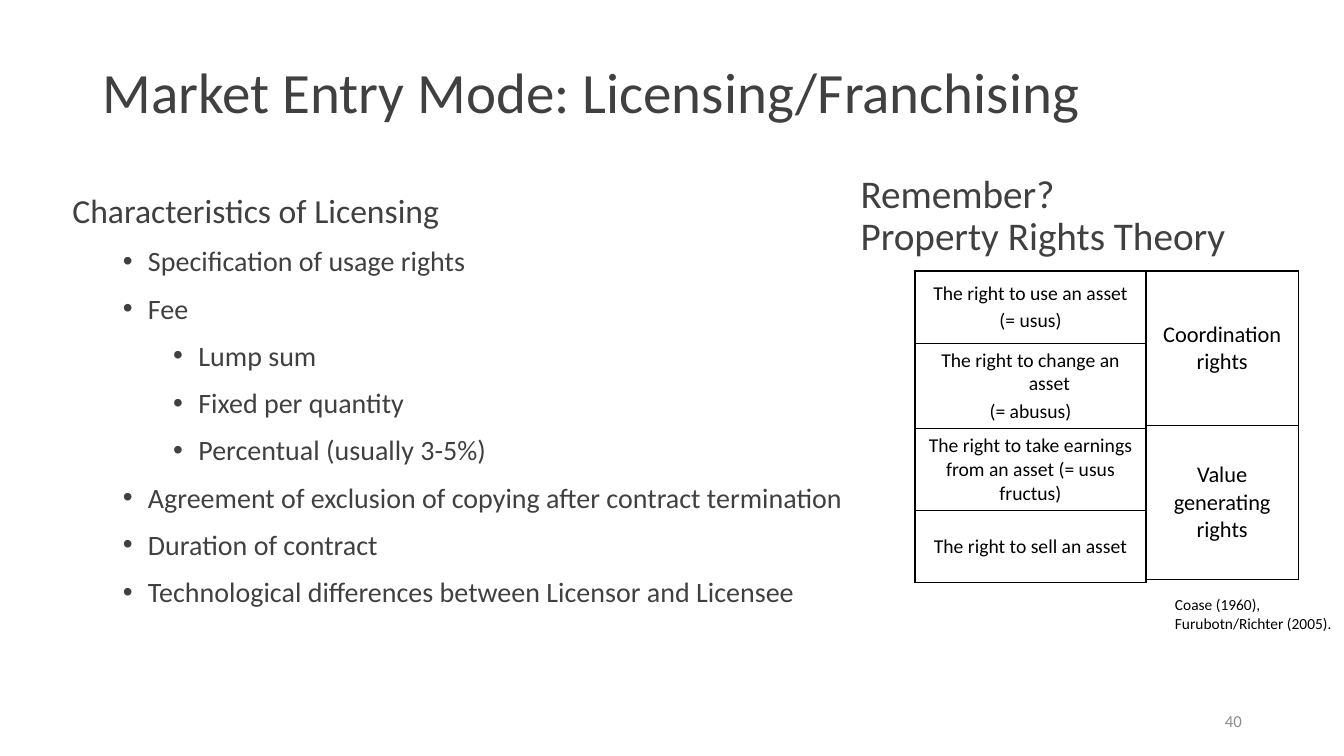
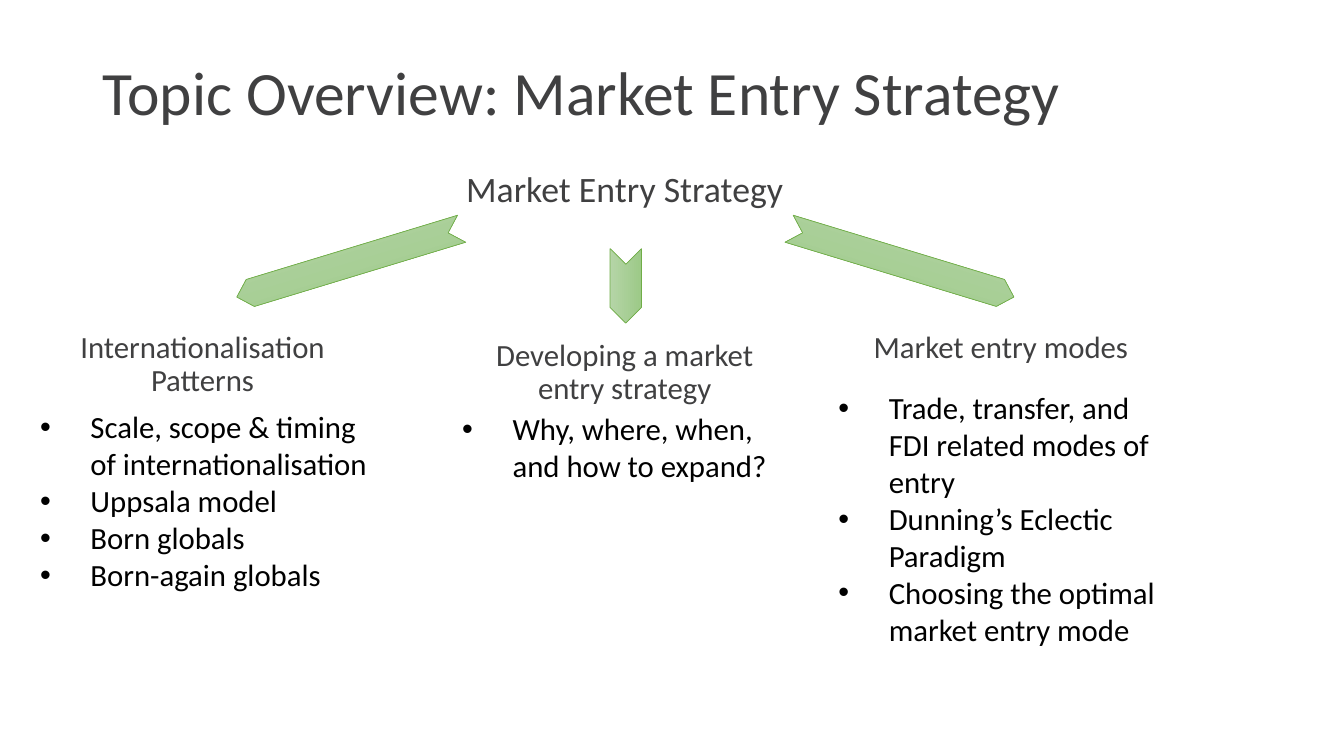
import pptx
import pptx.util
import pptx.dml.color
import pptx.enum.shapes
import pptx.enum.text
import pptx.oxml
import pptx.oxml.ns
import lxml.etree

Cm = pptx.util.Cm
Pt = pptx.util.Pt
Align = pptx.enum.text.PP_ALIGN
Anchor = pptx.enum.text.MSO_ANCHOR
FONT = "Calibri"
DARK, BLACK, GREY = "404041", "000000", "8C8C8C"
LIGHT, DEEP, EDGE = "B5D5A7", "9CC987", "70AD47"
TITLE = (2.34, 0.56, 29.21, 3.68)
INDENT = 1.27
COLUMN = 8.69


def tint(code):
    return pptx.dml.color.RGBColor.from_string(code)


def child(parent, tag, **attrs):
    node = lxml.etree.SubElement(parent, pptx.oxml.ns.qn(tag))
    for name, value in attrs.items():
        node.set(name, str(value))
    return node


def put(frame, text, size=22, ink=DARK, align=Align.LEFT, lead=1.0,
        gap=0, left=0, hang=0, mark=False, level=0):
    first = not frame.text
    para = frame.paragraphs[0] if first else frame.add_paragraph()
    props = para._p.get_or_add_pPr()
    props.set("marL", str(Cm(left)))
    props.set("indent", str(-Cm(hang)))
    if mark:
        child(props, "a:buFont", typeface="Arial")
        child(props, "a:buChar", char="•")
    else:
        child(props, "a:buNone")
    para.level = level
    para.alignment = align
    para.line_spacing = lead
    para.space_before = Pt(0 if first else gap)
    run = para.add_run()
    run.text = text
    run.font.name = FONT
    run.font.size = Pt(size)
    run.font.color.rgb = tint(ink)


def place(shape, area, anchor):
    shape.left, shape.top, shape.width, shape.height = map(Cm, area)
    frame = shape.text_frame
    frame.word_wrap = True
    frame.auto_size = pptx.enum.text.MSO_AUTO_SIZE.NONE
    frame.vertical_anchor = anchor
    return frame


def box(slide, area, anchor=Anchor.TOP):
    return place(slide.shapes.add_textbox(*map(Cm, area)), area, anchor)


def start(deck, title, size):
    slide = deck.slides.add_slide(deck.slide_layouts[1])
    frame = place(slide.shapes.title, TITLE, Anchor.MIDDLE)
    put(frame, title, size=size, lead=0.9)
    return slide


def border(cell):
    props = cell._tc.get_or_add_tcPr()
    for side in ("a:lnL", "a:lnR", "a:lnT", "a:lnB"):
        line = child(props, side, w=Pt(1))
        child(child(line, "a:solidFill"), "a:srgbClr", val=BLACK)


def grid(slide, left, top, width, rows, size):
    total = sum(height for height, *_ in rows)
    table = slide.shapes.add_table(
        len(rows), 1, Cm(left), Cm(top), Cm(width), Cm(total)).table
    table.first_row = table.horz_banding = False
    for index, (height, hang, lines) in enumerate(rows):
        table.rows[index].height = Cm(height)
        cell = table.cell(index, 0)
        cell.vertical_anchor = Anchor.MIDDLE
        border(cell)
        cell.fill.background()
        for line in lines:
            put(cell.text_frame, line, size=size, ink=BLACK,
                align=Align.CENTER, gap=size * 0.2, left=hang, hang=hang)


def arrow(slide, area, turn, shade):
    kind = pptx.enum.shapes.MSO_SHAPE.CHEVRON
    shape = slide.shapes.add_shape(kind, *map(Cm, area))
    shape.shadow.inherit = False
    shape.rotation = turn
    shape.fill.gradient()
    shape.fill.gradient_angle = shade
    for stop, code in zip(shape.fill.gradient_stops, (LIGHT, DEEP)):
        stop.color.rgb = tint(code)
    shape.line.color.rgb = tint(EDGE)
    shape.line.width = Pt(0.5)


def licence(deck):
    slide = start(deck, "Market Entry Mode: Licensing/Franchising", 40.7)
    body = place(slide.placeholders[1], (1.57, 4.45, 20.3, 11.15), Anchor.TOP)
    put(body, "Characteristics of Licensing", size=24, lead=1.2)
    for level, text in (
            (1, "Specification of usage rights"),
            (1, "Fee"),
            (2, "Lump sum"),
            (2, "Fixed per quantity"),
            (2, "Percentual (usually 3-5%)"),
            (1, "Agreement of exclusion of copying after contract termination"),
            (1, "Duration of contract"),
            (1, "Technological differences between Licensor and Licensee")):
        put(body, text, size=20, lead=1.2, gap=5, mark=True, level=level,
            left=INDENT * (level + 0.5), hang=INDENT / 2)

    recall = box(slide, (21.44, 4.5, 10, 1.93), Anchor.MIDDLE)
    for text in ("Remember?", "Property Rights Theory"):
        put(recall, text, size=28, lead=0.9)

    left, top, width = 23.06, 6.83, 5.82
    grid(slide, left, top, width, (
        (1.82, 0.95, ("The right to use an asset", "(= usus)")),
        (2.14, 0.95, ("The right to change an asset", "(= abusus)")),
        (2.01, 0, ("The right to take earnings from an asset (= usus fructus)",)),
        (1.82, 0, ("The right to sell an asset",))), 14)
    grid(slide, left + width, top, 3.84, (
        (3.89, 0, ("Coordination rights",)),
        (3.89, 0, ("Value generating rights",))), 16)

    put(box(slide, (29.36, 14.88, 4.5, 1.2)),
        "Coase (1960), Furubotn/Richter (2005).", size=11, ink=BLACK)
    put(box(slide, (23.93, 17.66, 7.62, 1.01), Anchor.MIDDLE), "40",
        size=12, ink=GREY, align=Align.RIGHT)


def topic(deck):
    slide = start(deck, "Topic Overview: Market Entry Strategy", 44)
    head = place(slide.placeholders[1], (11.4, 3.89, COLUMN, 1.93),
                 Anchor.MIDDLE)
    put(head, "Market Entry Strategy", size=25.5, align=Align.CENTER, lead=0.8)

    for area, turn, shade in (
            ((5.84, 6.27, 5.92, 0.71), 163.1, 90),
            ((19.76, 6.27, 5.92, 0.71), 16.9, 270),
            ((14.83, 6.81, 1.88, 0.79), 90, 90)):
        arrow(slide, area, turn, shade)

    for left, top, name, low, width, points in (
            (0.76, 8.23, "Internationalisation Patterns", 10.16, 8.99,
             ("Scale, scope & timing of internationalisation",
              "Uppsala model", "Born globals", "Born-again globals")),
            (11.4, 8.43, "Developing a market entry strategy", 10.21, 8.71,
             ("Why, where, when, and how to expand?",)),
            (20.88, 7.82, "Market entry modes", 9.68, 8.71,
             ("Trade, transfer, and FDI related modes of entry",
              "Dunning’s Eclectic Paradigm",
              "Choosing the optimal market entry mode"))):
        put(box(slide, (left, top, COLUMN, 1.93), Anchor.MIDDLE), name,
            align=Align.CENTER, lead=0.9)
        frame = box(slide, (left, low, width, 6.83))
        for point in points:
            put(frame, point, ink=BLACK, mark=True, left=INDENT, hang=INDENT)


def main():
    deck = pptx.Presentation()
    deck.slide_width, deck.slide_height = Cm(33.87), Cm(19.05)
    licence(deck)
    topic(deck)
    deck.save("out.pptx")


if __name__ == "__main__":
    main()
